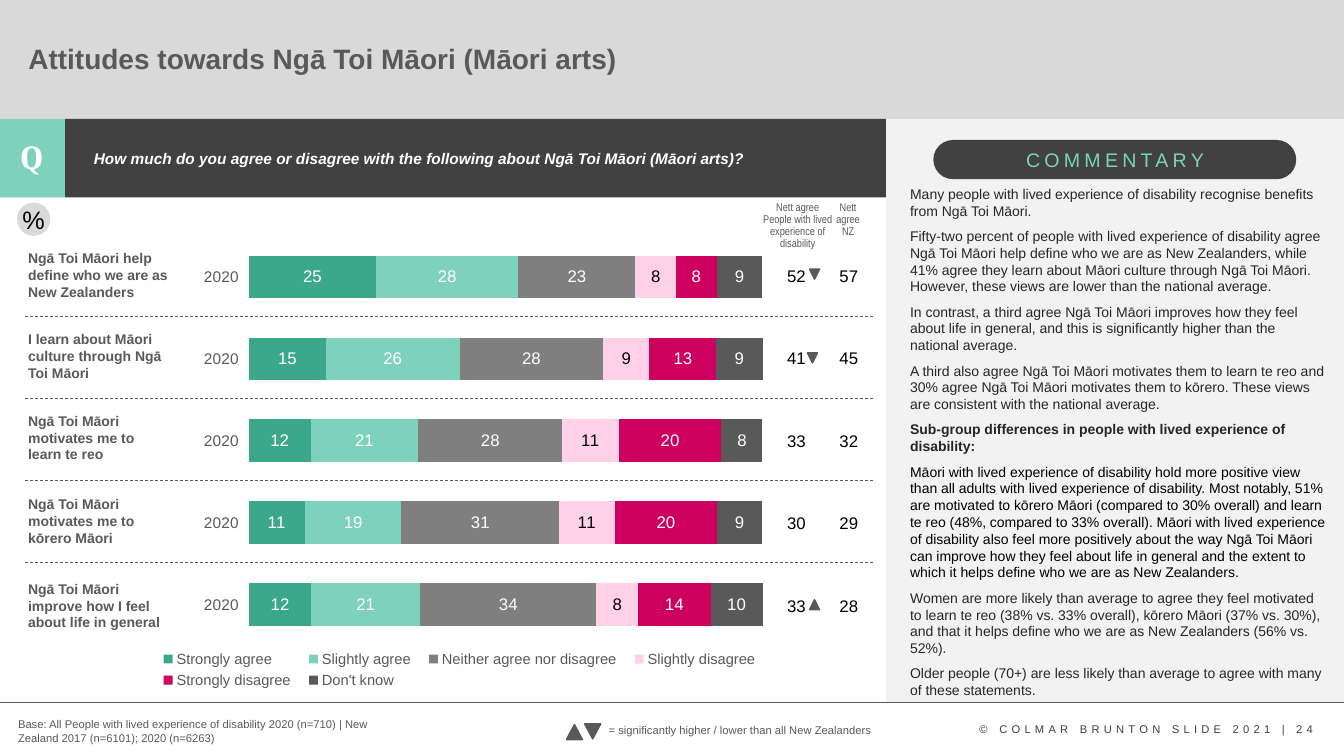
from dataclasses import dataclass, field

from lxml.etree import SubElement
from pptx import Presentation
from pptx.chart.data import CategoryChartData
from pptx.dml.color import RGBColor
from pptx.enum.chart import XL_CHART_TYPE, XL_LEGEND_POSITION, XL_TICK_LABEL_POSITION
from pptx.enum.dml import MSO_LINE
from pptx.enum.shapes import MSO_CONNECTOR, MSO_SHAPE
from pptx.enum.text import MSO_ANCHOR, MSO_AUTO_SIZE, PP_ALIGN
from pptx.oxml import parse_xml
from pptx.oxml.ns import nsdecls, qn
from pptx.util import Pt

Box = tuple[float, float, float, float]
GREY, DARK, MINT, WHITE, BLACK, INK = "595959", "414141", "7ED2BB", "FFFFFF", "000000", "262626"
NO_TABLE_STYLE = "{2D5ABB26-0587-4C30-8999-92F81FD0307C}"


@dataclass
class Statement:
    label: str
    top: float
    shares: tuple[int, ...]
    nett_lived: int
    nett_country: int
    width: float = 118.8


@dataclass
class Panel:
    box: Box
    fill: str
    kind: MSO_SHAPE = MSO_SHAPE.RECTANGLE
    rotation: int = 0
    outline: bool = False


@dataclass
class TextItem:
    box: Box
    paragraphs: tuple[str, ...]
    size: float
    color: str = GREY
    style: dict = field(default_factory=dict)
    paragraph_style: dict = field(default_factory=dict)
    wrap: bool = True
    tracking: int = 0


CENTRE = {"alignment": PP_ALIGN.CENTER}
TIGHT = {"line_spacing": 0.9}
BOLD = {"bold": True}

STATEMENTS = [
    Statement("Ngā Toi Māori help define who we are as New Zealanders", 175, (25, 28, 23, 8, 8, 9), 52, 57),
    Statement("I learn about Māori culture through Ngā Toi Māori", 232.6, (15, 26, 28, 9, 13, 9), 41, 45),
    Statement("Ngā Toi Māori motivates me to learn te reo", 291, (12, 21, 28, 11, 20, 8), 33, 32, 111.6),
    Statement("Ngā Toi Māori motivates me to kōrero Māori", 350.6, (11, 19, 31, 11, 20, 9), 30, 29),
    Statement("Ngā Toi Māori improve how I feel about life in general", 411, (12, 21, 34, 8, 14, 10), 33, 28),
]
ANSWERS = [  # name, fill, label colour
    ("Strongly agree", "3AA889", WHITE),
    ("Slightly agree", MINT, WHITE),
    ("Neither agree nor disagree", "7F7F7F", WHITE),
    ("Slightly disagree", "FFD1E6", BLACK),
    ("Strongly disagree", "CD005F", WHITE),
    ("Don't know", GREY, WHITE),
]
PANELS = [
    Panel((0, -1.5, 960, 86.5), "D9D9D9"),
    Panel((632.9, 85, 327.1, 417), "F2F2F2"),
    Panel((46.4, 85, 586.5, 56), DARK),
    Panel((0, 85, 46.4, 56), MINT),
    Panel((666.7, 100, 259.2, 28), DARK, MSO_SHAPE.ROUNDED_RECTANGLE),
    Panel((12.2, 144.7, 23.8, 23.8), "D9D9D9", MSO_SHAPE.OVAL),
]
MARKERS = [
    Panel(box, GREY, MSO_SHAPE.ISOSCELES_TRIANGLE, rotation, True)
    for box, rotation in [
        ((404.6, 517.5, 11.5, 10.8), 0),
        ((417.6, 517, 11.5, 10.8), 180),
        ((578.2, 192.2, 7.2, 7.2), 180),
        ((576.7, 252, 7.2, 7.2), 180),
        ((578.2, 428.4, 7.2, 7.2), 0),
    ]
]
TEXTS = [
    TextItem((692.6, 512.6, 260, 17.3), ("© COLMAR BRUNTON SLIDE 2021 | 24",), 8, "404040", tracking=300),
    TextItem((5.8, 93.6, 33.8, 36), ("Q",), 24, WHITE, {"bold": True, "name": "Cambria"}, CENTRE),
    TextItem((725.8, 102.2, 145.4, 24.5), ("COMMENTARY",), 14, MINT, wrap=False, tracking=300),
    TextItem((427.7, 513.4, 204.5, 17.3), ("= significantly higher / lower than all New Zealanders",), 8, wrap=False),
    TextItem((5.8, 509, 269.3, 26.6), (
        "Base: All People with lived experience of disability 2020 (n=710) | New Zealand 2017 (n=6101); 2020 (n=6263)",
    ), 8),
    TextItem((537.8, 140.4, 64.1, 42.5), ("Nett agree People with lived experience of disability",), 8,
             style={"name": "Arial Narrow"}, paragraph_style=CENTRE | TIGHT),
    TextItem((581, 140.4, 49.7, 33), ("Nett", "agree", "NZ"), 8,
             style={"name": "Arial Narrow"}, paragraph_style=CENTRE | TIGHT),
]
COMMENTARY = [  # text, colour, bold
    ("Many people with lived experience of disability recognise benefits from Ngā Toi Māori.", INK, False),
    ("Fifty-two percent of people with lived experience of disability agree Ngā Toi Māori help define who we are as New Zealanders, while 41% agree they learn about Māori culture through Ngā Toi Māori. However, these views are lower than the national average.", INK, False),
    ("In contrast, a third agree Ngā Toi Māori improves how they feel about life in general, and this is significantly higher than the national average.", INK, False),
    ("A third also agree Ngā Toi Māori motivates them to learn te reo and 30% agree Ngā Toi Māori motivates them to kōrero. These views are consistent with the national average.", INK, False),
    ("Sub-group differences in people with lived experience of disability:", INK, True),
    ("Māori with lived experience of disability hold more positive view than all adults with lived experience of disability. Most notably, 51% are motivated to kōrero Māori (compared to 30% overall) and learn te reo (48%, compared to 33% overall). Māori with lived experience of disability also feel more positively about the way Ngā Toi Māori can improve how they feel about life in general and the extent to which it helps define who we are as New Zealanders.", BLACK, False),
    ("Women are more likely than average to agree they feel motivated to learn te reo (38% vs. 33% overall), kōrero Māori (37% vs. 30%), and that it helps define who we are as New Zealanders (56% vs. 52%).", INK, False),
    ("Older people (70+) are less likely than average to agree with many of these statements.", INK, False),
]


def set_color(target, color: str) -> None:
    """Colour a font, or make a fill or line solid in that colour."""
    if hasattr(target, "solid"):
        target.solid()
        target = target.fore_color
    elif hasattr(target, "color"):
        target = target.color
    target.rgb = RGBColor.from_string(color)


def set_font(font, size: float, color: str, **style) -> None:
    for name, value in ({"name": "Arial", "size": Pt(size)} | style).items():
        setattr(font, name, value)
    set_color(font, color)


def write(frame, paragraphs, size: float, color: str, style: dict, paragraph_style: dict) -> None:
    for index, text in enumerate(paragraphs):
        paragraph = frame.add_paragraph() if index else frame.paragraphs[0]
        for name, value in paragraph_style.items():
            setattr(paragraph, name, value)
        run = paragraph.add_run()
        run.text = text
        set_font(run.font, size, color, **style)


def lengths(box: Box) -> list:
    return [Pt(value) for value in box]


def add_panel(slide, panel: Panel):
    shape = slide.shapes.add_shape(panel.kind, *lengths(panel.box))
    shape.shadow.inherit = False
    shape.rotation = panel.rotation
    set_color(shape.fill, panel.fill)
    if panel.outline:
        set_color(shape.line, panel.fill)
        shape.line.width = Pt(1)
    else:
        shape.line.fill.background()
    if panel.kind == MSO_SHAPE.ROUNDED_RECTANGLE:
        shape.adjustments[0] = 0.5
    return shape


def add_text(slide, item: TextItem):
    shape = slide.shapes.add_textbox(*lengths(item.box))
    shape.text_frame.word_wrap = item.wrap
    write(shape.text_frame, item.paragraphs, item.size, item.color, item.style, item.paragraph_style)
    if item.tracking:
        for properties in shape.element.iter(qn("a:rPr")):
            properties.set("spc", str(item.tracking))
    return shape


def add_line(slide, left: float, right: float, y: float, dashed: bool = False) -> None:
    connector = slide.shapes.add_connector(MSO_CONNECTOR.STRAIGHT, *lengths((left, y, right, y)))
    set_color(connector.line, GREY)
    connector.line.width = Pt(0.5)
    if dashed:
        connector.line.dash_style = MSO_LINE.DASH
    SubElement(connector.element.spPr, qn("a:effectLst"))


def fill_placeholder(shape, box: Box, text: str, size: float, color: str, style: dict, anchor) -> None:
    """Move a placeholder to the front and write unbulleted text in it."""
    shape.element.getparent().append(shape.element)
    shape.left, shape.top, shape.width, shape.height = lengths(box)
    frame = shape.text_frame
    frame.auto_size, frame.vertical_anchor = MSO_AUTO_SIZE.NONE, anchor
    write(frame, (text,), size, color, style, TIGHT | {"space_before": Pt(0), "alignment": PP_ALIGN.LEFT})
    for properties in shape.element.iter(qn("a:pPr")):
        properties.set("marL", "0")
        properties.set("indent", "0")
        SubElement(properties, qn("a:buNone"))


def place_in_chart(parent, index: int, box: Box, inner: bool = False) -> None:
    """Set a manual layout, in fractions of the chart's size."""
    for old in parent.findall(qn("c:layout")):
        parent.remove(old)
    target = '<c:layoutTarget val="inner"/>' if inner else ""
    modes = '<c:xMode val="edge"/><c:yMode val="edge"/>'
    sizes = "".join(f'<c:{name} val="{value}"/>' for name, value in zip("xywh", box))
    layout = f"<c:layout {nsdecls('c')}><c:manualLayout>{target}{modes}{sizes}</c:manualLayout></c:layout>"
    parent.insert(index, parse_xml(layout))


def add_attitude_chart(slide) -> None:
    data = CategoryChartData()
    data.categories = ["2020"] * len(STATEMENTS)
    for index, (name, _, _) in enumerate(ANSWERS):
        data.add_series(name, [statement.shares[index] for statement in reversed(STATEMENTS)])
    box = lengths((103, 107.3, 450.7, 416.9))
    chart = slide.shapes.add_chart(XL_CHART_TYPE.BAR_STACKED_100, *box, data).chart
    set_font(chart.font, 10, BLACK)
    chart.has_title = False
    plot = chart.plots[0]
    plot.gap_width, plot.overlap, plot.vary_by_categories = 92, 100, False
    for series, (_, fill, label_color) in zip(plot.series, ANSWERS):
        set_color(series.format.fill, fill)
        series.data_labels.show_value = True
        set_font(series.data_labels.font, 12, label_color)
    chart.value_axis.has_major_gridlines = False
    chart.value_axis.visible = False
    axis = chart.category_axis
    axis.format.line.fill.background()
    axis.tick_label_position = XL_TICK_LABEL_POSITION.LOW
    set_font(axis.tick_labels.font, 11, GREY)
    chart.has_legend = True
    legend = chart.legend
    legend.position, legend.include_in_layout = XL_LEGEND_POSITION.BOTTOM, False
    set_font(legend.font, 10.5, GREY)
    place_in_chart(chart.element.find(".//" + qn("c:plotArea")), 0, (0.166, 0.147, 0.814, 0.702), True)
    place_in_chart(chart.element.find(".//" + qn("c:legend")), 1, (0.01, 0.85, 0.98, 0.08))


def add_nett_table(slide) -> None:
    frame = slide.shapes.add_table(2 * len(STATEMENTS), 2, *lengths((550.1, 182.9, 75, 294.5)))
    frame.element.find(".//" + qn("a:tableStyleId")).text = NO_TABLE_STYLE
    table = frame.table
    table.first_row = table.horz_banding = False
    for cell in table.iter_cells():
        cell.fill.background()
        cell.vertical_anchor = MSO_ANCHOR.MIDDLE
    for index, statement in enumerate(STATEMENTS):
        for column, value in enumerate((statement.nett_lived, statement.nett_country)):
            write(table.cell(2 * index, column).text_frame, (str(value),), 12, BLACK, {}, CENTRE)


def main() -> None:
    presentation = Presentation()
    presentation.slide_width, presentation.slide_height = Pt(960), Pt(540)
    slide = presentation.slides.add_slide(presentation.slide_layouts[1])
    *_, percent_disc = [add_panel(slide, panel) for panel in PANELS]
    frame = percent_disc.text_frame
    for side in ("left", "top", "right", "bottom"):
        setattr(frame, f"margin_{side}", 0)
    frame.word_wrap = False
    write(frame, ("%",), 18, BLACK, {}, CENTRE)
    add_line(slide, 0, 960, 501.8)
    fill_placeholder(slide.shapes.title, (13, 15, 805.7, 56.2), "Attitudes towards Ngā Toi Māori (Māori arts)",
                     20, GREY, BOLD, MSO_ANCHOR.MIDDLE)
    fill_placeholder(slide.placeholders[1], (59.8, 104.4, 547.2, 33),
                     "How much do you agree or disagree with the following about Ngā Toi Māori (Māori arts)?",
                     11, WHITE, BOLD | {"italic": True}, MSO_ANCHOR.TOP)
    add_attitude_chart(slide)
    for index in range(len(STATEMENTS) - 1):
        add_line(slide, 18, 623.5, 226 + 58.6 * index, dashed=True)
    add_nett_table(slide)
    labels = [TextItem((13, item.top, item.width, 44), (item.label,), 10, style=BOLD) for item in STATEMENTS]
    for item in TEXTS + labels:
        add_text(slide, item)
    texts = tuple(text for text, _, _ in COMMENTARY)
    commentary = add_text(slide, TextItem((643, 128.9, 311, 376.6), texts, 10, INK))
    for index, (paragraph, (_, color, bold)) in enumerate(zip(commentary.text_frame.paragraphs, COMMENTARY)):
        paragraph.space_before = Pt(6 if index else 0)
        set_font(paragraph.runs[0].font, 10, color, bold=bold)
    for marker in MARKERS:
        add_panel(slide, marker)
    presentation.save("out.pptx")


if __name__ == "__main__":
    main()
